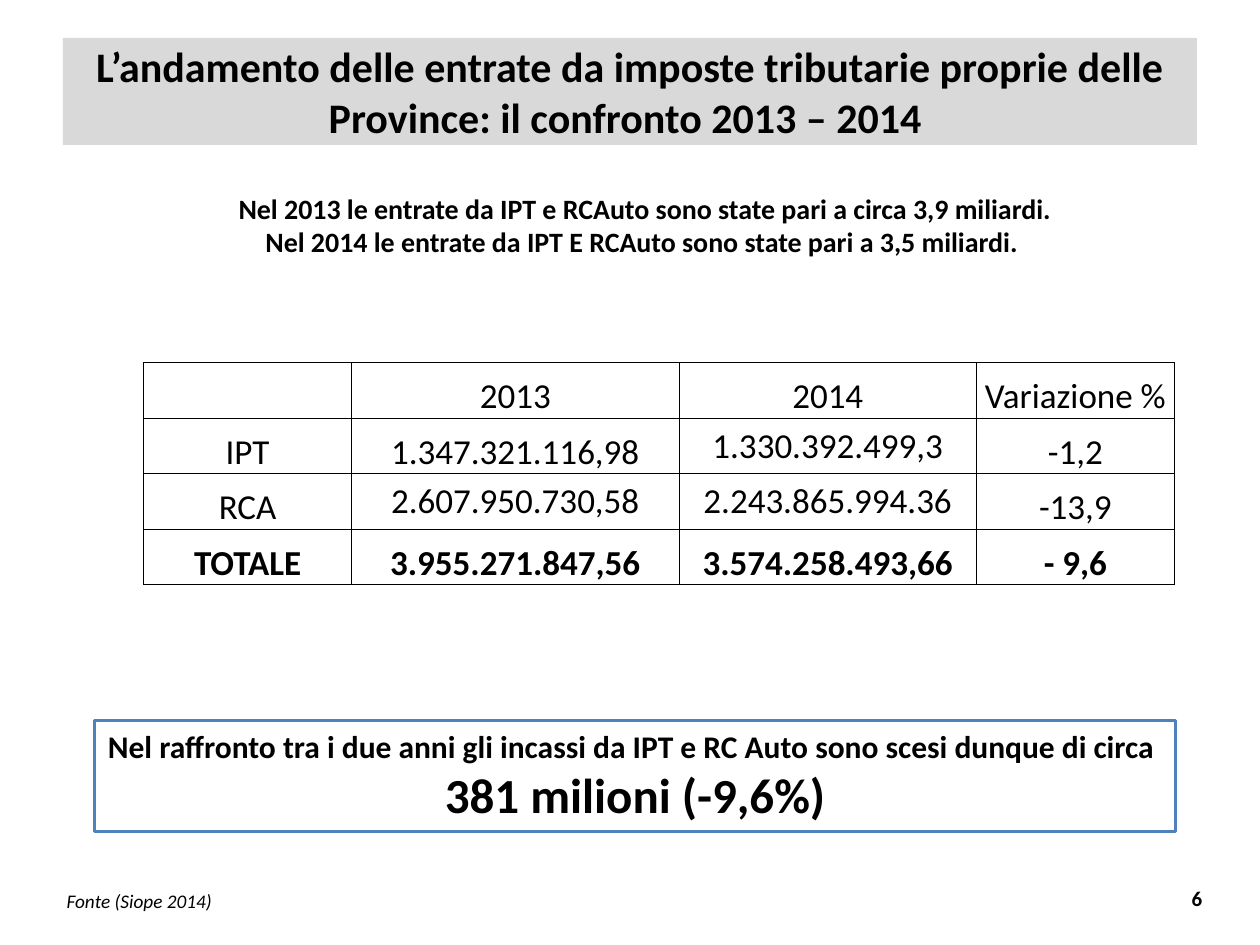
import pptx
import pptx.util
import pptx.oxml
import pptx.dml.color
import pptx.enum.shapes
import pptx.enum.text

COLOURS = {"text": "000000", "band": "D9D9D9", "paper": "FFFFFF", "accent": "4F81BD"}
ALIGN = pptx.enum.text.PP_ALIGN
ANCHOR = pptx.enum.text.MSO_ANCHOR
RECTANGLE = pptx.enum.shapes.MSO_SHAPE.RECTANGLE


class SlideBuilder:
    font = "Calibri"
    columns, rows = 100, 75

    def __init__(self, deck):
        self.deck = deck
        self.page = deck.slides.add_slide(deck.slide_layouts[6])

    def across(self, columns):
        return round(self.deck.slide_width * columns / self.columns)

    def down(self, rows):
        return round(self.deck.slide_height * rows / self.rows)

    def place(self, left, top, width, height):
        return self.across(left), self.down(top), self.across(width), self.down(height)

    def colour(self, name):
        return pptx.dml.color.RGBColor.from_string(COLOURS[name])

    def fill(self, item, name):
        item.fill.solid()
        item.fill.fore_color.rgb = self.colour(name)

    def set_lines(self, frame, lines, align=ALIGN.CENTER, bold=True, italic=False):
        for index, (text, size) in enumerate(lines):
            para = frame.add_paragraph() if index else frame.paragraphs[0]
            para.text = text
            para.alignment = align
            font = para.font
            font.name, font.size = self.font, pptx.util.Pt(size)
            font.bold, font.italic = bold, italic
            font.color.rgb = self.colour("text")

    def text(self, place, lines, anchor=ANCHOR.TOP, **style):
        box = self.page.shapes.add_textbox(*self.place(*place))
        box.text_frame.word_wrap = True
        box.text_frame.vertical_anchor = anchor
        self.set_lines(box.text_frame, lines, **style)

    def panel(self, place, lines, fill, line=None, anchor=ANCHOR.TOP):
        box = self.page.shapes.add_shape(RECTANGLE, *self.place(*place))
        box.shadow.inherit = False
        self.fill(box, fill)
        if line:
            box.line.color.rgb = self.colour(line)
            box.line.width = pptx.util.Pt(2)
        else:
            box.line.fill.background()
        box.text_frame.word_wrap = True
        box.text_frame.vertical_anchor = anchor
        self.set_lines(box.text_frame, lines)

    def border(self, cell):
        properties = cell._tc.get_or_add_tcPr()
        for index, side in enumerate(("lnL", "lnR", "lnT", "lnB")):
            line = pptx.oxml.parse_xml(
                f'<a:{side} xmlns:a="http://schemas.openxmlformats.org/drawingml/2006/main" w="6350">'
                f'<a:solidFill><a:srgbClr val="{COLOURS["text"]}"/></a:solidFill></a:{side}>')
            properties.insert(index, line)

    def table(self, left, top, widths, row_height, records, middle_cells):
        place = self.place(left, top, sum(widths), row_height * len(records))
        table = self.page.shapes.add_table(len(records), len(widths), *place).table
        for column, width in zip(table.columns, widths):
            column.width = self.across(width)
        for row, record in enumerate(records):
            table.rows[row].height = self.down(row_height)
            for column, text in enumerate(record):
                cell = table.cell(row, column)
                self.fill(cell, "paper")
                self.border(cell)
                cell.margin_left = cell.margin_right = cell.margin_top = pptx.util.Inches(0.01)
                cell.margin_bottom = 0
                cell.vertical_anchor = ANCHOR.MIDDLE if (row, column) in middle_cells else ANCHOR.BOTTOM
                self.set_lines(cell.text_frame, [(text, 20)], bold=row == len(records) - 1)


def main():
    deck = pptx.Presentation()
    deck.slide_width, deck.slide_height = pptx.util.Inches(10), pptx.util.Inches(7.5)
    slide = SlideBuilder(deck)
    slide.panel((5, 3, 90, 8.5), [
        ("L’andamento delle entrate da imposte tributarie proprie delle Province: il confronto 2013 – 2014 ", 24),
    ], "band", anchor=ANCHOR.MIDDLE)
    slide.text((73.1, 69.3, 23.3, 4), [("6", 12)], ANCHOR.MIDDLE, align=ALIGN.RIGHT)
    slide.text((5.9, 14.7, 90.6, 9.1), [
        ("Nel 2013 le entrate da IPT e RCAuto sono state pari a circa 3,9 miliardi.", 16),
        ("Nel 2014 le entrate da IPT E RCAuto sono state pari a 3,5 miliardi. ", 16),
    ])
    slide.panel((7.5, 57.2, 85.8, 8.8), [
        ("Nel raffronto tra i due anni gli incassi da IPT e RC Auto sono scesi dunque di circa ", 18),
        ("381 milioni (-9,6%)", 28),
    ], "paper", "accent")
    slide.text((4.3, 70.1, 21.3, 2.9), [("Fonte (Siope 2014)", 11)],
               align=ALIGN.LEFT, bold=False, italic=True)
    slide.table(11.4, 28.8, (16.5, 26, 23.6, 15.7), 4.4, [
        ("", "2013", "2014", "Variazione %"),
        ("IPT", "1.347.321.116,98", "1.330.392.499,3", "-1,2"),
        ("RCA", "2.607.950.730,58", "2.243.865.994.36", "-13,9"),
        (" TOTALE ", "3.955.271.847,56", "3.574.258.493,66", "- 9,6"),
    ], {(1, 2), (2, 1), (2, 2)})
    deck.save("out.pptx")


if __name__ == "__main__":
    main()
